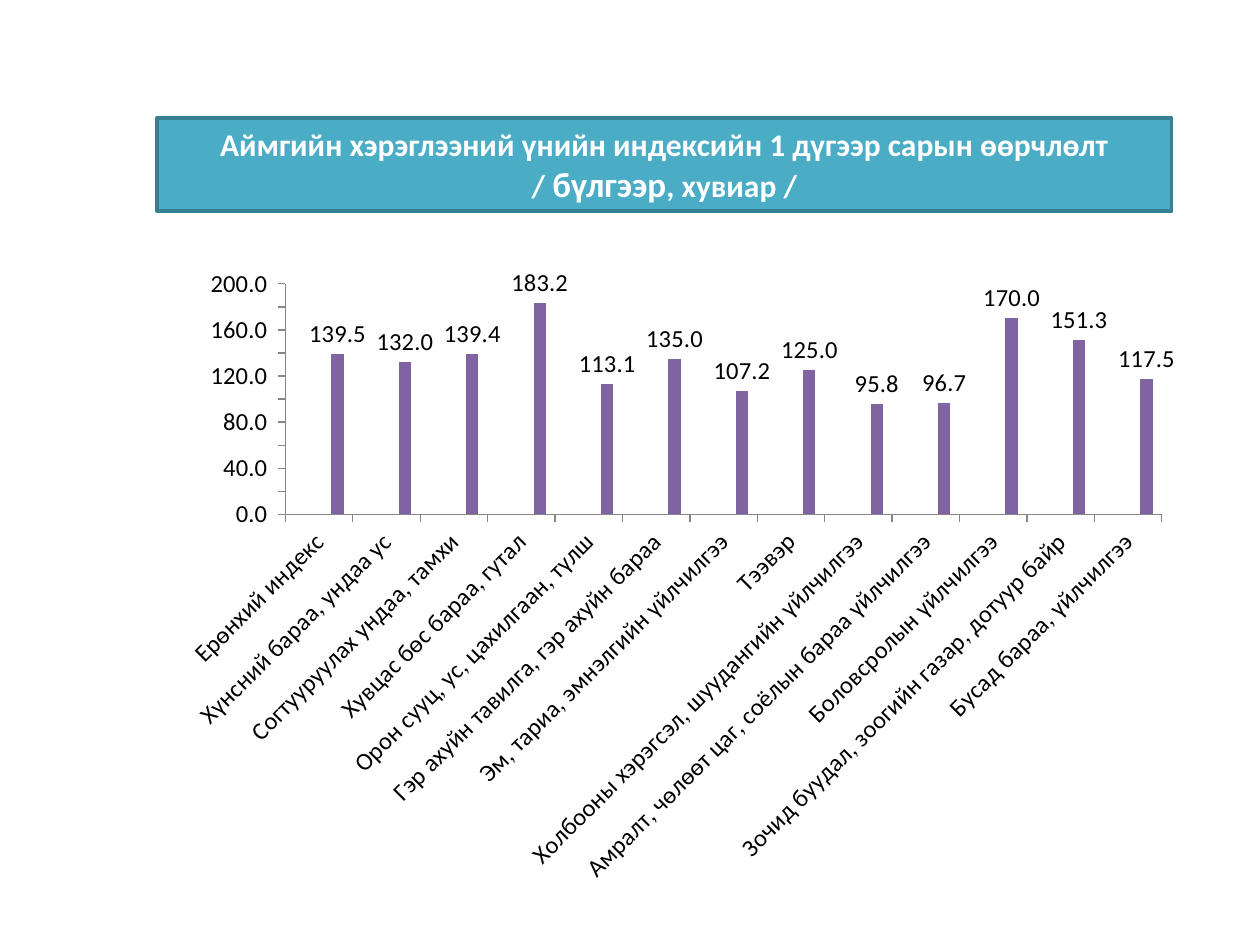
from pptx import Presentation
from pptx.chart.data import CategoryChartData
from pptx.dml.color import RGBColor
from pptx.enum.chart import XL_CHART_TYPE, XL_LABEL_POSITION, XL_TICK_MARK
from pptx.enum.shapes import MSO_SHAPE
from pptx.enum.text import MSO_ANCHOR, MSO_AUTO_SIZE, PP_ALIGN
from pptx.oxml.ns import qn
from pptx.util import Cm, Pt

COLUMN = XL_CHART_TYPE.COLUMN_CLUSTERED
OUTSIDE_END = XL_LABEL_POSITION.OUTSIDE_END
TICK_OUT = XL_TICK_MARK.OUTSIDE
TICK_NONE = XL_TICK_MARK.NONE
RECT = MSO_SHAPE.RECTANGLE
MIDDLE = MSO_ANCHOR.MIDDLE
GROW = MSO_AUTO_SIZE.SHAPE_TO_FIT_TEXT
CENTER = PP_ALIGN.CENTER

FONT = "Calibri"
COLORS = {
    "banner": "4BACC6",
    "banner_line": "377F92",
    "white": "FFFFFF",
    "black": "000000",
    "axis": "868686",
}
SERIES_COLORS = ["4F81BD", "C0504D", "9BBB59", "8064A2"]

TITLE = [
    [("Аймгийн хэрэглээний үнийн индексийн 1 дүгээр сарын өөрчлөлт", 18)],
    [("/ ", 18), ("бүлгээр", 20), (", хувиар /", 18)],
]
INDEX = {
    "Ерөнхий индекс": 139.5,
    "Хүнсний бараа, ундаа ус": 132.0,
    "Согтууруулах ундаа, тамхи": 139.4,
    "Хувцас бөс бараа, гутал": 183.2,
    "Орон сууц, ус, цахилгаан, түлш": 113.1,
    "Гэр ахуйн тавилга, гэр ахуйн бараа": 135.0,
    "Эм, тариа, эмнэлгийн үйлчилгээ": 107.2,
    "Тээвэр": 125.0,
    "Холбооны хэрэгсэл, шуудангийн үйлчилгээ": 95.8,
    "Амралт, чөлөөт цаг, соёлын бараа үйлчилгээ": 96.7,
    "Боловсролын үйлчилгээ": 170.0,
    "Зочид буудал, зоогийн газар, дотуур байр": 151.3,
    "Бусад бараа, үйлчилгээ": 117.5,
}


def rgb(value):
    return RGBColor.from_string(value)


def add_banner(s, x, y, w, h):
    sp = s.shapes.add_shape(RECT, x, y, w, h)
    sp.shadow.inherit = False
    sp.fill.solid()
    sp.fill.fore_color.rgb = rgb(COLORS["banner"])
    sp.line.color.rgb = rgb(COLORS["banner_line"])
    sp.line.width = Pt(2)
    tf = sp.text_frame
    tf.word_wrap = True
    tf.auto_size = GROW
    tf.vertical_anchor = MIDDLE
    for i, runs in enumerate(TITLE):
        p = tf.add_paragraph() if i else tf.paragraphs[0]
        p.alignment = CENTER
        for text, size in runs:
            r = p.add_run()
            r.text = text
            r.font.name = FONT
            r.font.size = Pt(size)
            r.font.bold = True
            r.font.color.rgb = rgb(COLORS["white"])


def style_axes(chart):
    for axis in (chart.category_axis, chart.value_axis):
        axis.has_major_gridlines = False
        axis.major_tick_mark = TICK_OUT
        axis.minor_tick_mark = TICK_NONE
        axis.format.line.color.rgb = rgb(COLORS["axis"])
    body = chart.category_axis.tick_labels.font._element.getparent().getparent()
    body.getparent().find(qn("a:bodyPr")).set("rot", "-2700000")
    value = chart.value_axis
    value.minimum_scale = 0
    value.maximum_scale = 200
    value.major_unit = 20
    value.tick_labels.number_format = "0.0_)"
    value.tick_labels.number_format_is_linked = False


def add_index_chart(s, x, y, w, h):
    data = CategoryChartData()
    data.categories = list(INDEX)
    for n in range(1, 4):
        data.add_series(f"Series {n}", [None] * len(INDEX))
    data.add_series("Series 4", list(INDEX.values()))
    chart = s.shapes.add_chart(COLUMN, x, y, w, h, data).chart
    chart.has_legend = False
    chart.has_title = False
    chart.font.name = FONT
    chart.font.size = Pt(14)
    chart.font.color.rgb = rgb(COLORS["black"])
    plot = chart.plots[0]
    plot.vary_by_categories = False
    plot.gap_width = 150
    plot.overlap = 0
    for series, color in zip(plot.series, SERIES_COLORS):
        series.format.fill.solid()
        series.format.fill.fore_color.rgb = rgb(color)
    labels = plot.series[3].data_labels
    labels.show_value = True
    labels.position = OUTSIDE_END
    labels.number_format = "##########0.0"
    labels.number_format_is_linked = False
    style_axes(chart)


def main():
    prs = Presentation()
    prs.slide_width = Cm(25.4)
    prs.slide_height = Cm(19.05)
    s = prs.slides.add_slide(prs.slide_layouts[6])
    add_banner(s, Cm(3.17), Cm(2.38), Cm(20.45), Cm(1.88))
    add_index_chart(s, Cm(3.38), Cm(5.16), Cm(20.45), Cm(12.9))
    prs.save("out.pptx")


if __name__ == "__main__":
    main()
